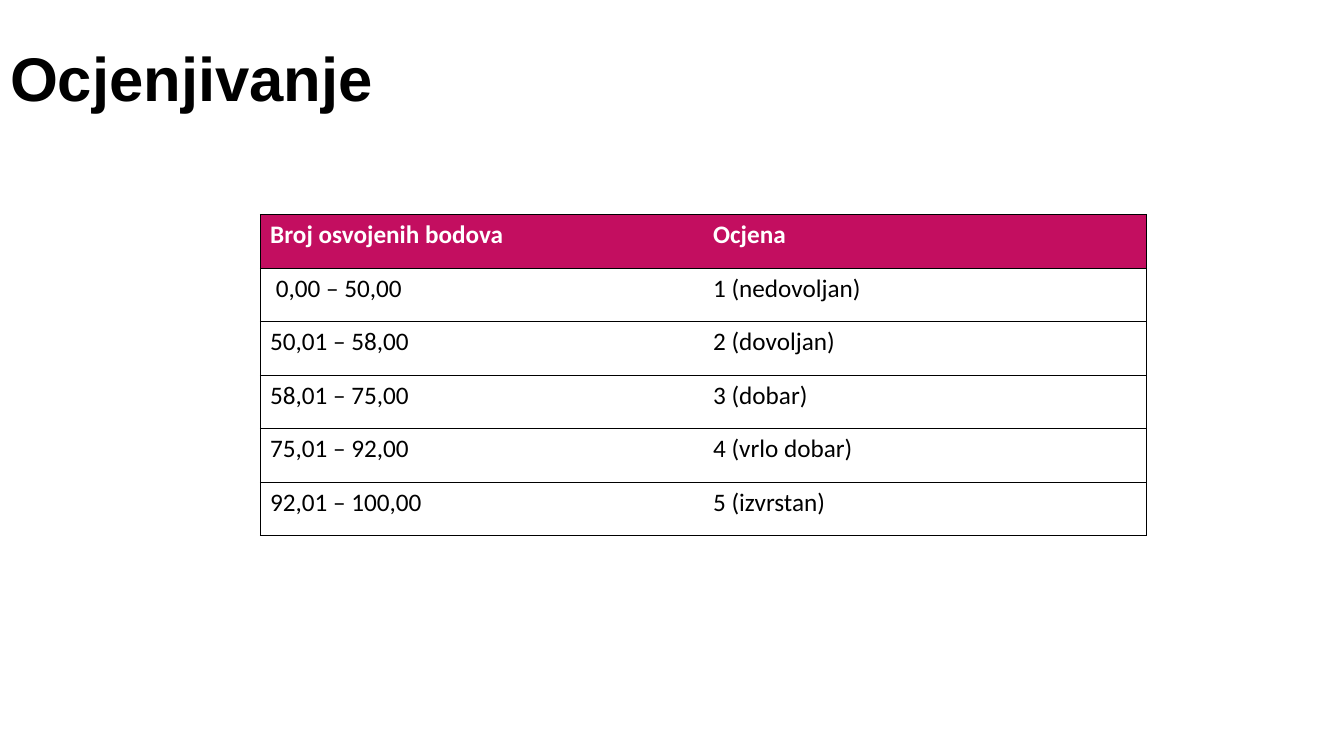
from lxml.etree import SubElement
from pptx import Presentation
from pptx.dml.color import RGBColor
from pptx.enum.text import MSO_ANCHOR, PP_ALIGN
from pptx.oxml.ns import qn
from pptx.util import Pt

BLACK = RGBColor(0x00, 0x00, 0x00)
WHITE = RGBColor(0xFF, 0xFF, 0xFF)
MAGENTA = RGBColor(0xC3, 0x0E, 0x60)

GRADES = [
    ("Broj osvojenih bodova", "Ocjena"),
    (" 0,00 – 50,00", "1 (nedovoljan)"),
    ("50,01 – 58,00", "2 (dovoljan)"),
    ("58,01 – 75,00", "3 (dobar)"),
    ("75,01 – 92,00", "4 (vrlo dobar)"),
    ("92,01 – 100,00", "5 (izvrstan)"),
]
COLUMN_WIDTH = Pt(316.4)
ROW_HEIGHT = Pt(38.2)
BORDER_WIDTH = Pt(0.5)


def style_font(paragraph, name, size, color, bold):
    for run in paragraph.runs:
        run.font.name = name
        run.font.size = Pt(size)
        run.font.bold = bold
        run.font.color.rgb = color


def add_heading(slide, text):
    heading = slide.shapes.title
    heading.left, heading.top = Pt(0), Pt(16.6)
    heading.width, heading.height = Pt(720), Pt(83.5)
    frame = heading.text_frame
    frame.text = text
    frame.vertical_anchor = MSO_ANCHOR.MIDDLE
    paragraph = frame.paragraphs[0]
    paragraph.alignment = PP_ALIGN.LEFT
    paragraph.line_spacing = 0.9
    style_font(paragraph, "Arial", 44, BLACK, True)


def set_borders(cell, visible_sides):
    properties = cell._tc.get_or_add_tcPr()
    for side in "LRTB":
        border = SubElement(properties, qn(f"a:ln{side}"), w=str(BORDER_WIDTH))
        if side in visible_sides:
            fill = SubElement(border, qn("a:solidFill"))
            SubElement(fill, qn("a:srgbClr"), val=str(BLACK))
        else:
            SubElement(border, qn("a:noFill"))


def fill_cell(cell, text, is_header, visible_sides):
    set_borders(cell, visible_sides)
    if is_header:
        cell.fill.solid()
        cell.fill.fore_color.rgb = MAGENTA
    else:
        cell.fill.background()
    cell.text_frame.text = text
    style_font(cell.text_frame.paragraphs[0], "Calibri", 18,
               WHITE if is_header else BLACK, is_header)


def add_grade_table(slide, grades):
    row_count, column_count = len(grades), len(grades[0])
    frame = slide.shapes.add_table(
        row_count, column_count, Pt(185.8), Pt(153.4),
        COLUMN_WIDTH * column_count, ROW_HEIGHT * row_count)
    table = frame.table
    table.horz_banding = False
    for row in table.rows:
        row.height = ROW_HEIGHT
    for column in table.columns:
        column.width = COLUMN_WIDTH
    for row_index, grade in enumerate(grades):
        for column_index, text in enumerate(grade):
            outer_side = "L" if column_index == 0 else "R"
            fill_cell(table.cell(row_index, column_index), text,
                      row_index == 0, "TB" + outer_side)


def main():
    presentation = Presentation()
    presentation.slide_width = Pt(960)
    presentation.slide_height = Pt(540)
    slide = presentation.slides.add_slide(presentation.slide_layouts[5])
    add_heading(slide, "Ocjenjivanje")
    add_grade_table(slide, GRADES)
    presentation.save("out.pptx")


if __name__ == "__main__":
    main()
